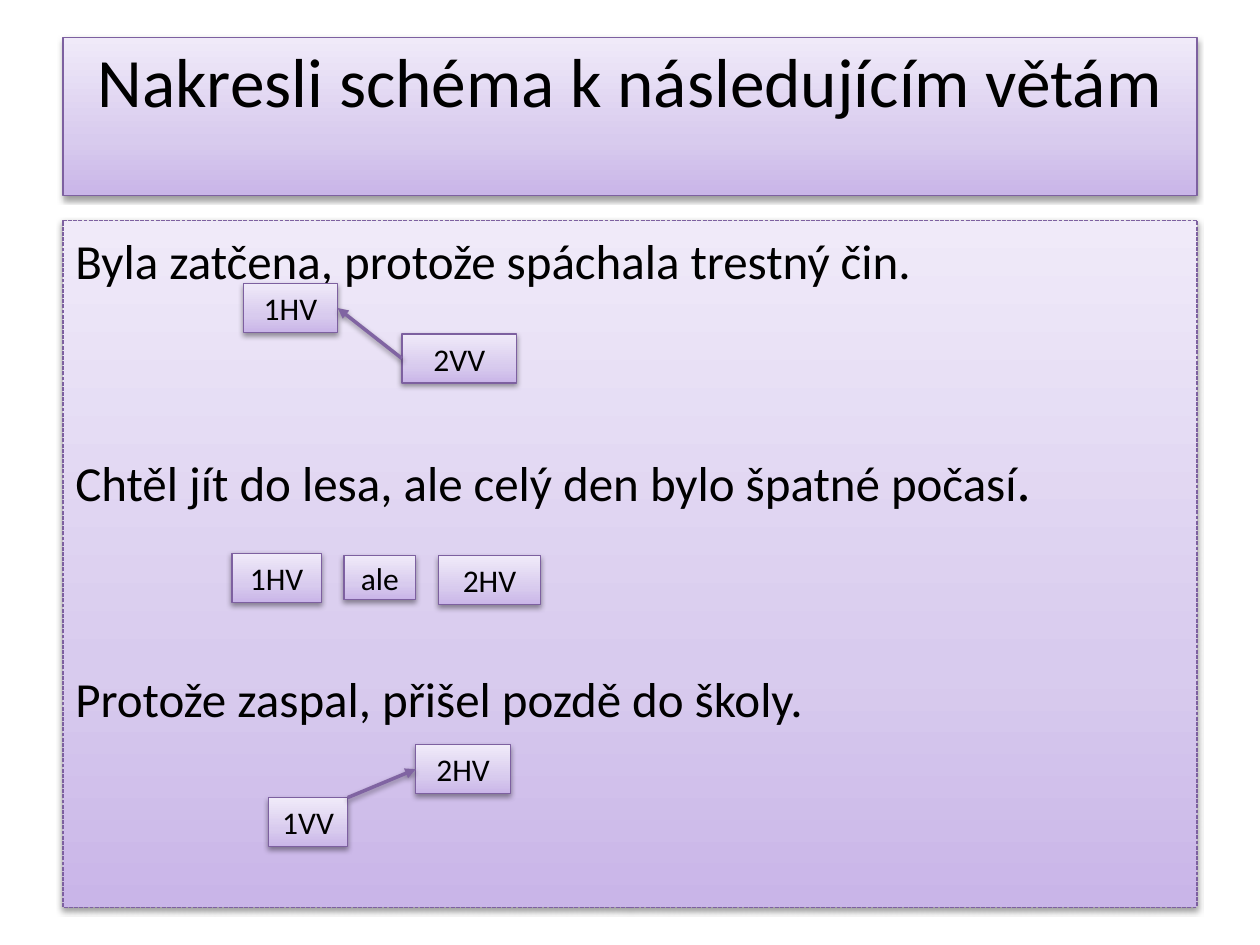
from copy import deepcopy
from typing import NamedTuple

from lxml import etree
from pptx import Presentation
from pptx.dml.color import RGBColor
from pptx.enum.dml import MSO_LINE
from pptx.enum.shapes import MSO_CONNECTOR, MSO_SHAPE
from pptx.enum.text import MSO_ANCHOR, PP_ALIGN
from pptx.oxml.ns import qn
from pptx.util import Inches, Pt

RECTANGLE = MSO_SHAPE.RECTANGLE
STRAIGHT = MSO_CONNECTOR.STRAIGHT
DASHED = MSO_LINE.SQUARE_DOT
LEFT, CENTER = PP_ALIGN.LEFT, PP_ALIGN.CENTER
TOP, MIDDLE = MSO_ANCHOR.TOP, MSO_ANCHOR.MIDDLE
LEFT_SIDE, RIGHT_SIDE = 1, 3

FONT = "Calibri"
GRADIENT = ((0, "C9B5E8"), (0.35, "D8CBEE"), (1, "F0EAF9"))
BORDER, ARROW, BLACK = "7D60A0", "8064A2", "000000"
SENTENCE_GAP = 89


class Clause(NamedTuple):
    text: str
    x: float
    y: float
    w: float
    h: float = 0.39


CLAUSES = {
    "arrested": Clause("1HV", 1.93, 2.25, 0.75),
    "crime": Clause("2VV", 3.19, 2.65, 0.91),
    "weather": Clause("2HV", 3.48, 4.41, 0.81),
    "forest": Clause("1HV", 1.84, 4.39, 0.71),
    "late": Clause("2HV", 3.3, 5.91, 0.75),
    "overslept": Clause("1VV", 2.13, 6.33, 0.63),
    "conjunction": Clause("ale", 2.73, 4.41, 0.57, 0.35),
}
SENTENCES = (
    (("Byla zatčena, protože spáchala trestný čin.", 28),),
    (("Chtěl jít do lesa, ale celý den bylo špatné počasí", 28), (".", 32)),
    (("Protože zaspal, přišel pozdě do školy.", 28),),
)


def rgb(value: str) -> RGBColor:
    return RGBColor.from_string(value)


def add_shadow(effects) -> None:
    """Fill an empty a:effectLst with a soft shadow falling downwards."""
    shadow = etree.SubElement(effects, qn("a:outerShdw"), blurRad="40000",
                              dist="20000", dir="5400000", rotWithShape="0")
    color = etree.SubElement(shadow, qn("a:srgbClr"), val=BLACK)
    etree.SubElement(color, qn("a:alpha"), val="38000")


def add_panel(slide, x: float, y: float, w: float, h: float):
    sp = slide.shapes.add_shape(RECTANGLE, Inches(x), Inches(y), Inches(w), Inches(h))
    sp.fill.gradient()
    sp.fill.gradient_angle = 90
    stops = sp._element.spPr.find(".//" + qn("a:gsLst"))
    stops.insert(1, deepcopy(stops[0]))
    for stop, (position, color) in zip(sp.fill.gradient_stops, GRADIENT):
        stop.position = position
        stop.color.rgb = rgb(color)
    sp.line.color.rgb = rgb(BORDER)
    sp.line.width = Pt(0.75)
    sp.shadow.inherit = False
    add_shadow(sp._element.spPr.find(qn("a:effectLst")))
    sp.text_frame.word_wrap = True
    return sp


def format_run(r, size: float) -> None:
    r.font.name = FONT
    r.font.size = Pt(size)
    r.font.color.rgb = rgb(BLACK)


def set_label(sp, text: str, size: float, anchor=MIDDLE) -> None:
    tf = sp.text_frame
    tf.text = text
    tf.vertical_anchor = anchor
    p = tf.paragraphs[0]
    p.alignment = CENTER
    format_run(p.runs[0], size)


def add_sentences(sp) -> None:
    tf = sp.text_frame
    tf.vertical_anchor = TOP
    tf.margin_top = Inches(0.08)
    for i, parts in enumerate(SENTENCES):
        p = tf.add_paragraph() if i else tf.paragraphs[0]
        p.alignment = LEFT
        p.space_before = Pt(SENTENCE_GAP if i else 0)
        for text, size in parts:
            r = p.add_run()
            r.text = text
            format_run(r, size)


def add_arrow(slide, x1: float, y1: float, x2: float, y2: float):
    line = slide.shapes.add_connector(STRAIGHT, Inches(x1), Inches(y1),
                                      Inches(x2), Inches(y2))
    line.line.color.rgb = rgb(ARROW)
    line.line.width = Pt(2)
    sp_pr = line._element.spPr
    etree.SubElement(sp_pr.find(qn("a:ln")), qn("a:tailEnd"), type="triangle")
    add_shadow(etree.SubElement(sp_pr, qn("a:effectLst")))
    return line


def main() -> None:
    prs = Presentation()
    prs.slide_width, prs.slide_height = Inches(10), Inches(7.5)
    slide = prs.slides.add_slide(prs.slide_layouts[6])

    title = add_panel(slide, 0.5, 0.3, 9, 1.25)
    title.text_frame.margin_top = 0
    set_label(title, "Nakresli schéma k následujícím větám", 39.6, TOP)

    body = add_panel(slide, 0.5, 1.75, 9, 5.45)
    body.line.dash_style = DASHED
    add_sentences(body)

    boxes = {}
    for name, clause in CLAUSES.items():
        boxes[name] = add_panel(slide, clause.x, clause.y, clause.w, clause.h)
        set_label(boxes[name], clause.text, 18)

    arrow = add_arrow(slide, 3.19, 2.84, 2.68, 2.45)
    arrow.begin_connect(boxes["crime"], LEFT_SIDE)
    arrow.end_connect(boxes["arrested"], RIGHT_SIDE)
    arrow = add_arrow(slide, 2.76, 6.33, 3.3, 6.11)
    arrow.end_connect(boxes["late"], LEFT_SIDE)

    prs.save("out.pptx")


if __name__ == "__main__":
    main()
